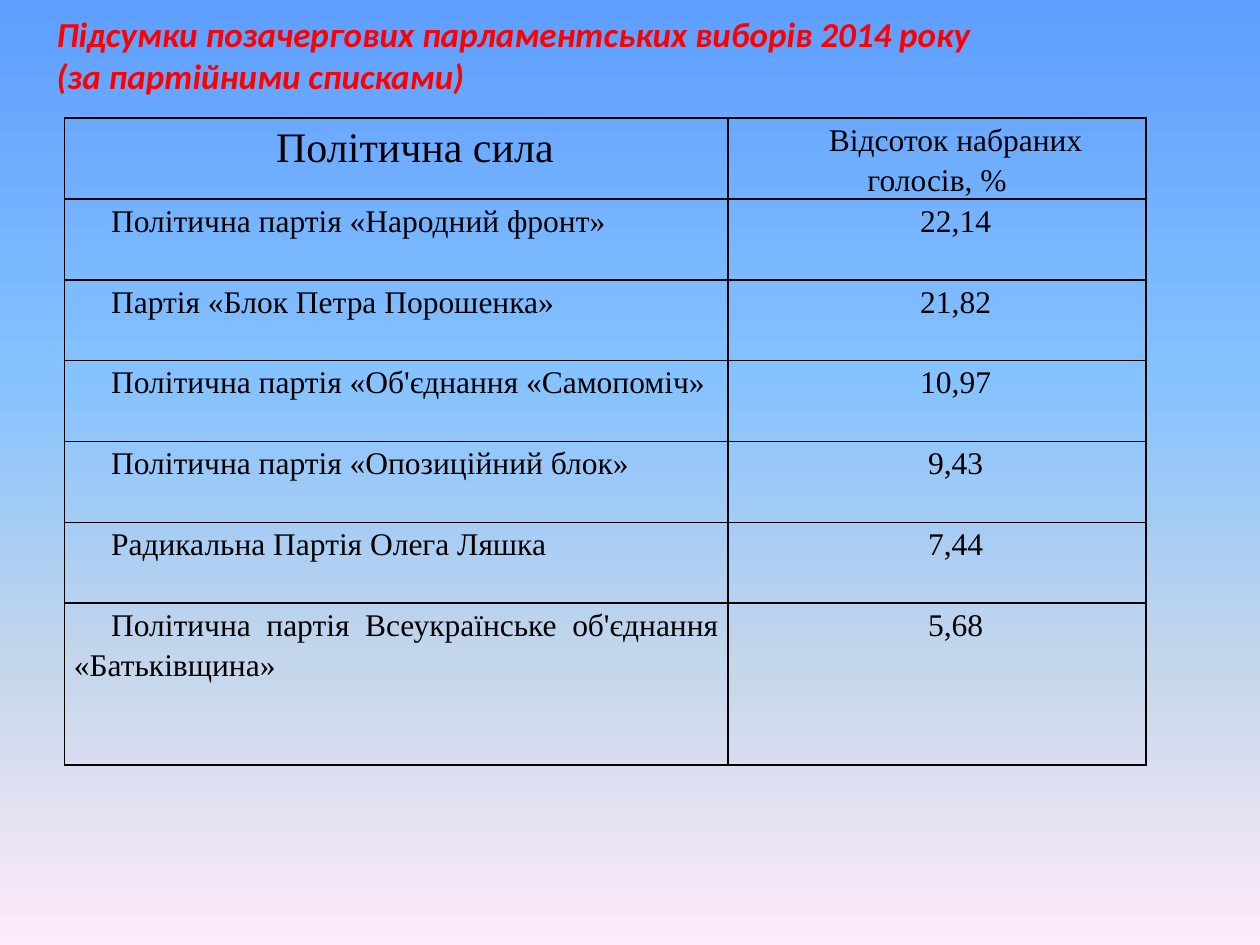
from dataclasses import dataclass

from lxml.etree import SubElement
from pptx import Presentation
from pptx.dml.color import RGBColor as RGB
from pptx.enum.text import MSO_AUTO_SIZE as AutoSize, PP_ALIGN as Align
from pptx.oxml import parse_xml
from pptx.oxml.ns import nsdecls, qn
from pptx.util import Cm, Pt


@dataclass(frozen=True)
class Theme:
    title_font: str = "Calibri"
    table_font: str = "Times New Roman"
    title_size: int = 20
    head_size: int = 24
    body_size: int = 18
    title_color: str = "FF0000"
    ink: str = "000000"
    border: float = 1
    backdrop: tuple = ((0, "5E9EFF"), (40, "85C2FF"), (70, "C4D6EB"), (100, "FFEBFA"))


THEME = Theme()
TITLE = (
    "Підсумки позачергових парламентських виборів 2014 року",
    "(за партійними списками)",
)
HEADER = ("Політична сила", "Відсоток набраних голосів, %")
RESULTS = (
    ("Політична партія «Народний фронт»", "22,14"),
    ("Партія «Блок Петра Порошенка»", "21,82"),
    ("Політична партія «Об'єднання «Самопоміч»", "10,97"),
    ("Політична партія «Опозиційний блок»", "9,43"),
    ("Радикальна Партія Олега Ляшка", "7,44"),
    ("Політична партія Всеукраїнське об'єднання «Батьківщина»", "5,68"),
)
COL_WIDTHS = (Cm(13.38), Cm(8.42))
ROW_HEIGHT = Cm(1.63)


def set_font(p, name, size, color):
    p.font.name = name
    p.font.size = Pt(size)
    p.font.color.rgb = RGB.from_string(color)


def paint_background(s):
    fill = s.background.fill
    fill.gradient()
    fill.gradient_angle = 270
    stops = s.element.find(".//" + qn("a:gsLst"))
    stops.clear()
    for pos, color in THEME.backdrop:
        stop = SubElement(stops, qn("a:gs"), pos=str(pos * 1000))
        SubElement(stop, qn("a:srgbClr"), val=color)


def add_title(s):
    tf = s.shapes.add_textbox(Cm(0.89), Cm(0.13), Cm(22.2), Cm(1.96)).text_frame
    tf.word_wrap = True
    tf.auto_size = AutoSize.SHAPE_TO_FIT_TEXT
    tf.text = "\n".join(TITLE)
    for p in tf.paragraphs:
        set_font(p, THEME.title_font, THEME.title_size, THEME.title_color)
        p.font.bold = p.font.italic = True


def add_borders(cell):
    tc_pr = cell._tc.get_or_add_tcPr()
    for i, side in enumerate("LRTB"):
        tc_pr.insert(i, parse_xml(
            f'<a:ln{side} {nsdecls("a")} w="{Pt(THEME.border)}"><a:solidFill>'
            f'<a:srgbClr val="{THEME.ink}"/></a:solidFill></a:ln{side}>'))


def fill_cell(cell, text, size, align):
    cell.fill.background()
    add_borders(cell)
    cell.margin_left = cell.margin_right = Cm(0.19)
    cell.margin_top = cell.margin_bottom = 0
    cell.text = text
    p = cell.text_frame.paragraphs[0]
    p.alignment = align
    p.line_spacing = 1.15
    p._p.get_or_add_pPr().set("indent", str(Cm(0.75)))
    set_font(p, THEME.table_font, size, THEME.ink)


def add_results(s):
    rows = (HEADER, *RESULTS)
    table = s.shapes.add_table(
        len(rows), len(HEADER), Cm(1.3), Cm(2.38),
        sum(COL_WIDTHS), ROW_HEIGHT * (len(rows) + 1)).table
    table.first_row = table.horz_banding = False
    for col, width in zip(table.columns, COL_WIDTHS):
        col.width = width
    for row in table.rows:
        row.height = ROW_HEIGHT
    table.rows[len(rows) - 1].height = ROW_HEIGHT * 2
    for i, (party, share) in enumerate(rows):
        size, align = (THEME.body_size, Align.JUSTIFY) if i else (THEME.head_size, Align.CENTER)
        fill_cell(table.cell(i, 0), party, size, align)
        fill_cell(table.cell(i, 1), share, THEME.body_size, Align.CENTER)


def main():
    prs = Presentation()
    prs.slide_width, prs.slide_height = Cm(25.4), Cm(19.05)
    s = prs.slides.add_slide(prs.slide_layouts[6])
    paint_background(s)
    add_results(s)
    add_title(s)
    prs.save("out.pptx")


if __name__ == "__main__":
    main()
